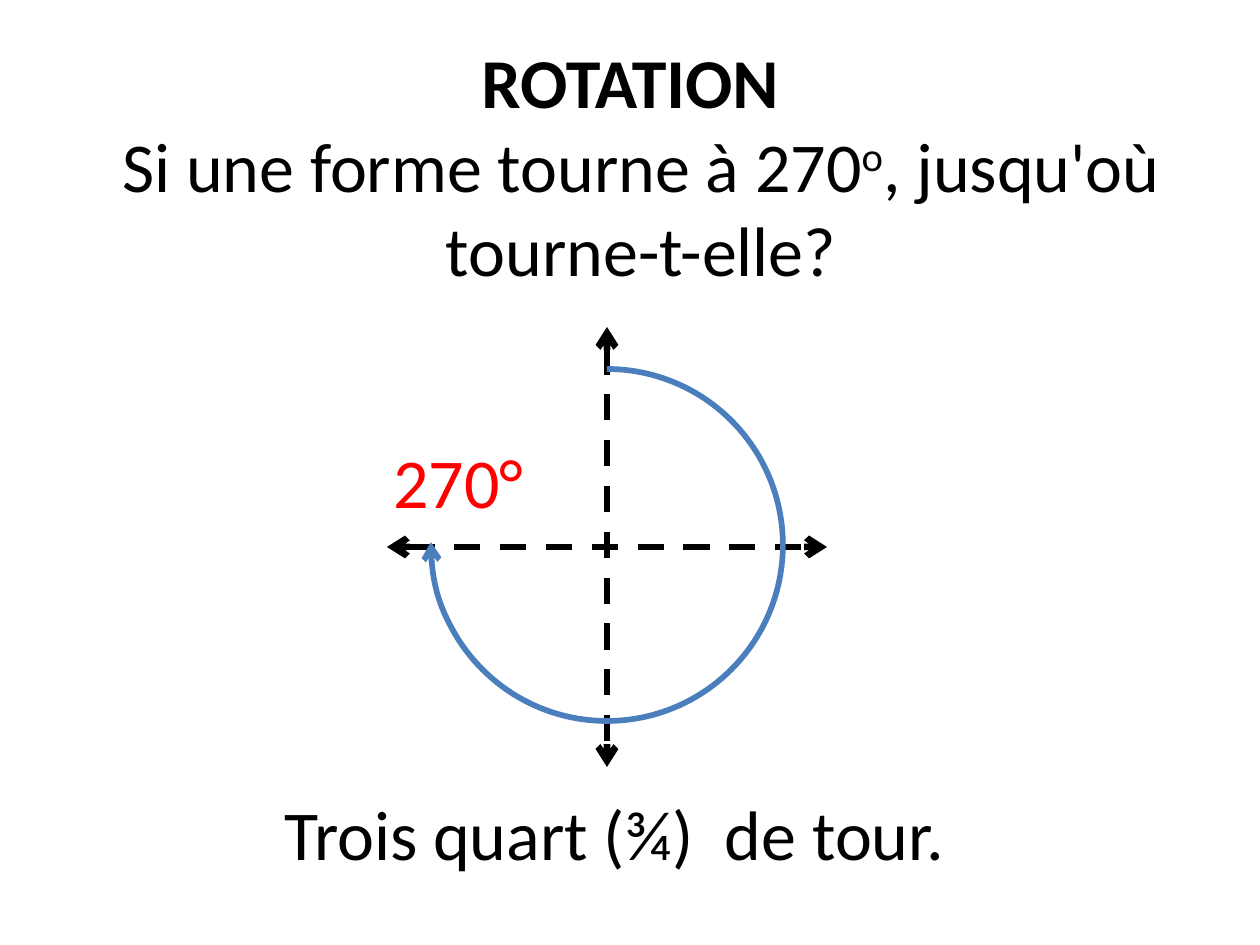
"""Build a slide on a 270 degree rotation."""
from pptx import Presentation
from pptx.dml.color import RGBColor
from pptx.enum.dml import MSO_LINE
from pptx.enum.shapes import MSO_CONNECTOR, MSO_SHAPE
from pptx.enum.text import MSO_AUTO_SIZE as FIT, PP_ALIGN
from pptx.oxml.ns import qn
from pptx.util import Pt
from lxml.etree import SubElement

BLACK = RGBColor(0x00, 0x00, 0x00)
RED = RGBColor(0xFF, 0x00, 0x00)
BLUE = RGBColor(0x4B, 0x7E, 0xBC)
SCALE = 914400 / 126
CENTER = PP_ALIGN.CENTER

TEXTS = [
    ((21, 32, 1218, 97), ["ROTATION"], dict(bold=True, align=CENTER)),
    ((106, 116, 1070, 183),
     ["Si une forme tourne à 270", "o", ", jusqu'où tourne-t-elle?"],
     dict(align=CENTER, raised=1)),
    ((272, 784, 716, 97), ["Trois quart (¾)  de tour."], {}),
    ((381, 432, 161, 97), ["270°"], dict(color=RED, wrap=False)),
]
MID_X, MID_Y, REACH, RADIUS = 607, 547, 220, 176
AXES = [(0, REACH), (REACH, 0)]
TURN = (162, 108.55)


def px(*nums):
    return [round(n * SCALE) for n in nums]


def add_text(slide, box, parts, color=BLACK, bold=None, align=None,
             wrap=True, raised=None):
    frame = slide.shapes.add_textbox(*px(*box)).text_frame
    frame.word_wrap = wrap
    frame.auto_size = FIT.SHAPE_TO_FIT_TEXT
    para = frame.paragraphs[0]
    para.alignment = align
    for i, part in enumerate(parts):
        run = para.add_run()
        run.text = part
        font = run.font
        font.name, font.size, font.bold = "Calibri", Pt(40), bold
        font.color.rgb = color
        if i == raised:
            run._r.get_or_add_rPr().set("baseline", "30000")


def style(line, color, width, *ends):
    line.color.rgb = color
    line.width = Pt(width)
    for end in ends:
        SubElement(line._get_or_add_ln(), qn(f"a:{end}"), type="arrow")


def add_axis(slide, dx, dy):
    axis = slide.shapes.add_connector(
        MSO_CONNECTOR.STRAIGHT,
        *px(MID_X - dx, MID_Y - dy, MID_X + dx, MID_Y + dy))
    axis.line.dash_style = MSO_LINE.DASH
    style(axis.line, BLACK, 3.75, "headEnd", "tailEnd")
    SubElement(axis._element.spPr, qn("a:effectLst"))


def add_turn(slide):
    arc = slide.shapes.add_shape(
        MSO_SHAPE.ARC,
        *px(MID_X - RADIUS, MID_Y - RADIUS - 2, 2 * RADIUS, 2 * RADIUS))
    for i, angle in enumerate(TURN):
        arc.adjustments[i] = angle
    arc.shadow.inherit = False
    arc.fill.background()
    style(arc.line, BLUE, 3.25, "tailEnd")


def main():
    deck = Presentation()
    deck.slide_width, deck.slide_height = px(1260, 945)
    slide = deck.slides.add_slide(deck.slide_layouts[6])
    for dx, dy in AXES:
        add_axis(slide, dx, dy)
    add_turn(slide)
    for box, parts, form in TEXTS:
        add_text(slide, box, parts, **form)
    deck.save("out.pptx")


if __name__ == "__main__":
    main()
